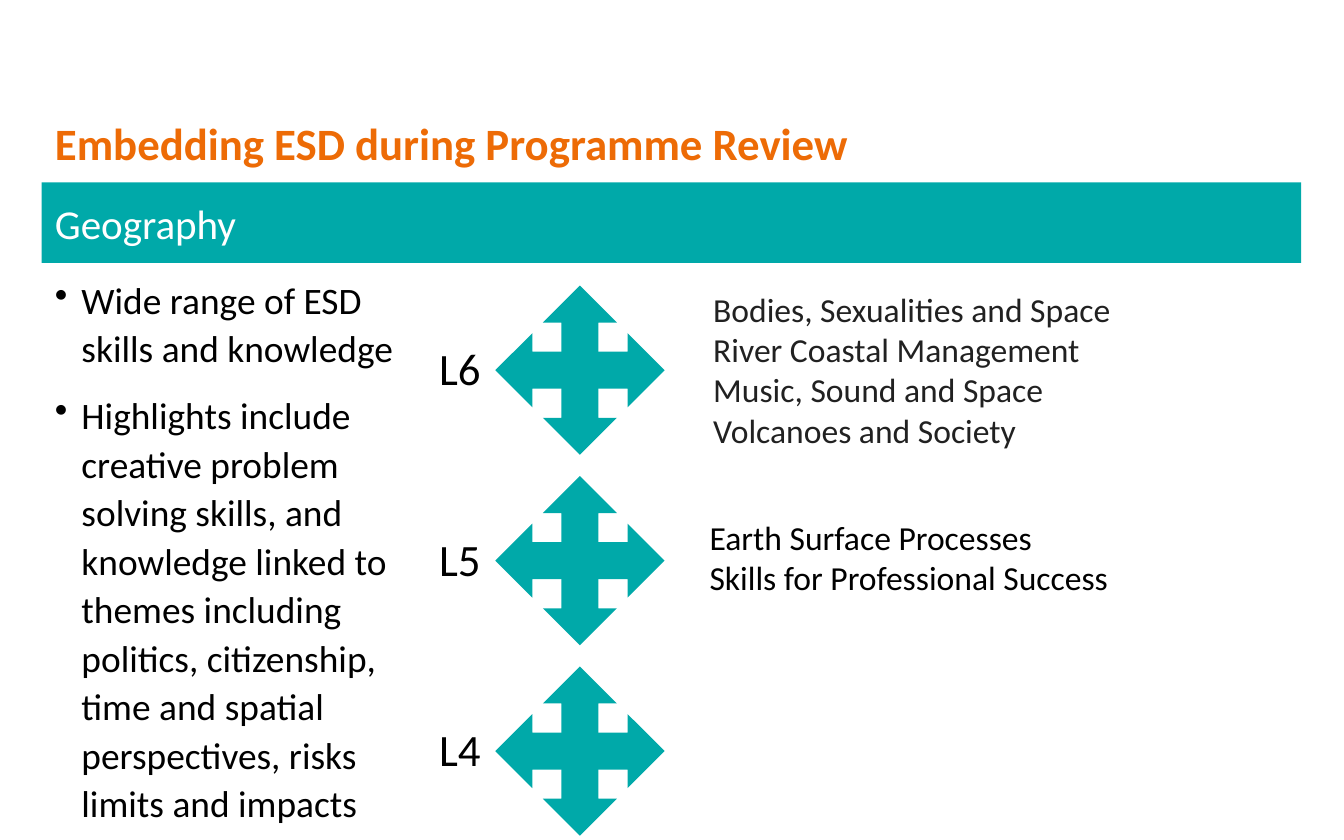
import lxml.etree
import pptx
import pptx.dml.color
import pptx.enum.shapes
import pptx.enum.text
import pptx.oxml.ns
import pptx.util

Cm = pptx.util.Cm
Pt = pptx.util.Pt
MIDDLE = pptx.enum.text.MSO_ANCHOR.MIDDLE
TEAL = "00A9A9"


def color(hex_string):
    return pptx.dml.color.RGBColor.from_string(hex_string)


def write(shape, lines, size, hex_string, wrap=True):
    """Fill a shape with one left-aligned paragraph per line."""
    frame = shape.text_frame
    frame.text = "\n".join(lines)
    frame.word_wrap = wrap
    if not wrap:
        frame.auto_size = pptx.enum.text.MSO_AUTO_SIZE.SHAPE_TO_FIT_TEXT
    for paragraph in frame.paragraphs:
        paragraph.alignment = pptx.enum.text.PP_ALIGN.LEFT
        paragraph.font.name = "Calibri"
        paragraph.font.size = Pt(size)
        paragraph.font.color.rgb = color(hex_string)
    return frame


presentation = pptx.Presentation()
presentation.slide_width = Cm(25.4)
presentation.slide_height = Cm(15.88)
slide = presentation.slides.add_slide(presentation.slide_layouts[6])
shapes = slide.shapes

# Title and subject banner
title = shapes.add_textbox(Cm(0.79), Cm(2.18), Cm(21.89), Cm(1.17))
title_frame = write(title, ["Embedding ESD during Programme Review"], 24, "ED6B06")
title_frame.vertical_anchor = MIDDLE
title_frame.paragraphs[0].font.bold = True
title_frame.paragraphs[0].line_spacing = 0.9

banner = shapes.add_shape(pptx.enum.shapes.MSO_SHAPE.RECTANGLE,
                          Cm(0.79), Cm(3.45), Cm(23.8), Cm(1.52))
banner.shadow.inherit = False
banner.fill.solid()
banner.fill.fore_color.rgb = color(TEAL)
banner.line.fill.background()
write(banner, ["Geography"], 22, "FFFFFF").vertical_anchor = MIDDLE

# Bulleted summary
summary = shapes.add_textbox(Cm(0.79), Cm(5.28), Cm(7.47), Cm(10.21))
points = [
    "Wide range of ESD skills and knowledge",
    "Highlights include creative problem solving skills, and knowledge linked to "
    "themes including politics, citizenship, time and spatial perspectives, "
    "risks limits and impacts",
]
summary_frame = write(summary, points, 20, "000000")
summary_frame.vertical_anchor = MIDDLE
for index, paragraph in enumerate(summary_frame.paragraphs):
    paragraph.line_spacing = Pt(26)
    paragraph.space_before = Pt(10 if index else 0)
    properties = paragraph._p.get_or_add_pPr()
    properties.set("marL", str(Cm(0.5)))
    properties.set("indent", str(-Cm(0.5)))
    bullet = lxml.etree.Element(pptx.oxml.ns.qn("a:buChar"), char="•")
    properties.find(pptx.oxml.ns.qn("a:defRPr")).addprevious(bullet)

# Study levels, each with a crossed pair of double arrows
for row, level in enumerate(["L6", "L5", "L4"]):
    offset = 3.6 * row
    for rotation in (0, 90):
        arrow = shapes.add_shape(pptx.enum.shapes.MSO_SHAPE.UP_DOWN_ARROW,
                                 Cm(10.26), Cm(5.4 + offset), Cm(1.4), Cm(3.2))
        arrow.adjustments[0] = 0.39
        arrow.adjustments[1] = 0.5
        arrow.rotation = rotation
        arrow.shadow.inherit = False
        arrow.fill.solid()
        arrow.fill.fore_color.rgb = color(TEAL)
        arrow.line.fill.background()
    label = shapes.add_textbox(Cm(8.05), Cm(6.32 + offset), Cm(1.3), Cm(1.27))
    write(label, [level], 24, "000000", wrap=False)

# Modules beside the upper two levels
module_lists = [
    (13.23, 5.33, 3.33, "212121",
     ["Bodies, Sexualities and Space", "River Coastal Management",
      "Music, Sound and Space", "Volcanoes and Society"]),
    (13.16, 9.65, 1.8, "000000",
     ["Earth Surface Processes", "Skills for Professional Success"]),
]
for left, top, height, hex_string, modules in module_lists:
    module_box = shapes.add_textbox(Cm(left), Cm(top), Cm(8.13), Cm(height))
    write(module_box, modules, 18, hex_string, wrap=False)

presentation.save("out.pptx")
